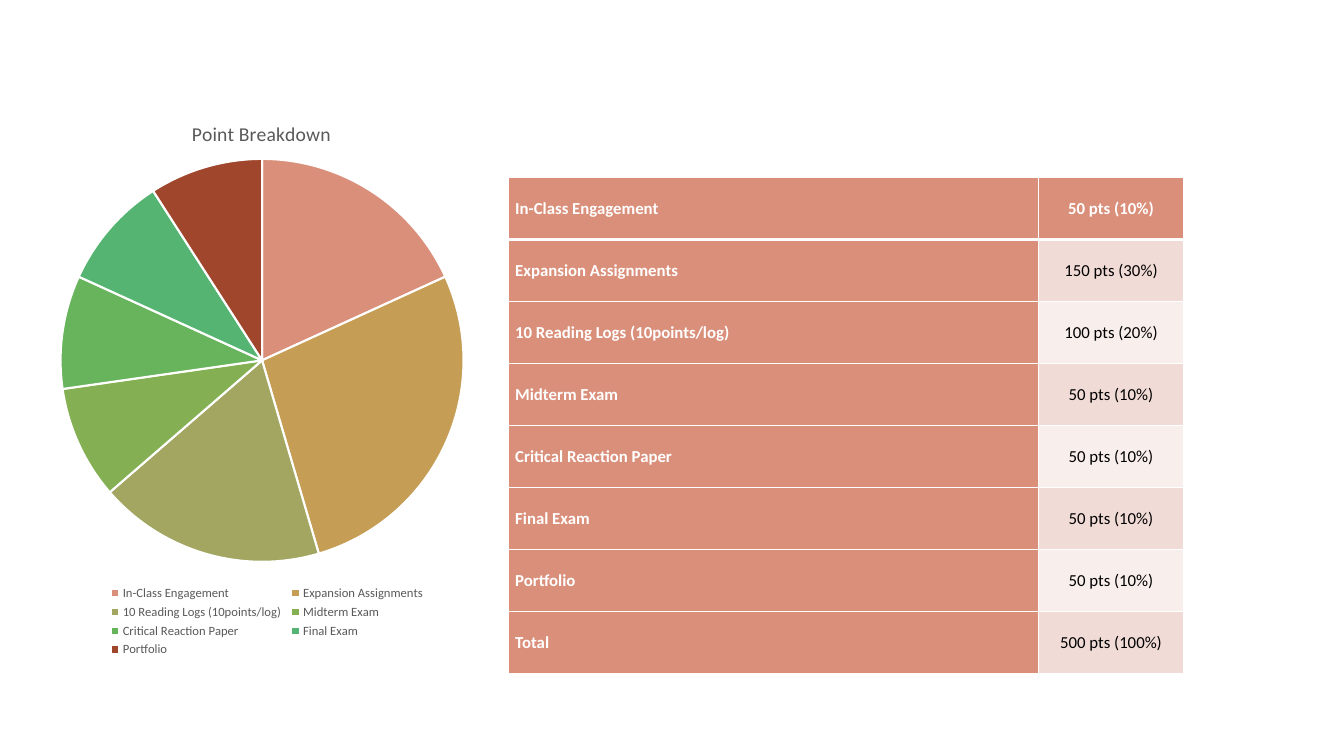
import pptx
import pptx.chart.data
import pptx.dml.color
import pptx.enum.chart
import pptx.enum.text
import pptx.oxml
import pptx.oxml.ns
import pptx.util

FONT = "Calibri"
COLORS = {"white": "FFFFFF", "black": "000000", "gray": "595959",
          "coral": "DA8F7A", "rose": "F1DBD7", "blush": "F8EEEC",
          "gold": "C59D55", "olive": "A2A661", "lime": "84B053",
          "green": "67B45D", "mint": "55B472", "rust": "A0462C"}
CHART_TITLE = "Point Breakdown"
SLICES = [
    ("In-Class Engagement", 18, "coral"),
    ("Expansion Assignments", 27, "gold"),
    ("10 Reading Logs (10points/log)", 18, "olive"),
    ("Midterm Exam", 9, "lime"),
    ("Critical Reaction Paper", 9, "green"),
    ("Final Exam", 9, "mint"),
    ("Portfolio", 9, "rust"),
]
POINTS = ["50 pts (10%)", "150 pts (30%)", "100 pts (20%)", "50 pts (10%)",
          "50 pts (10%)", "50 pts (10%)", "50 pts (10%)", "500 pts (100%)"]
GRADES = list(zip([name for name, share, color in SLICES] + ["Total"], POINTS))
COLUMN_WIDTHS = (5.26, 1.44)
ROW_HEIGHT = 0.615

Inches = pptx.util.Inches
Pt = pptx.util.Pt


def rgb(color):
    return pptx.dml.color.RGBColor.from_string(COLORS[color])


def set_font(font, size, color, bold=False):
    font.name = FONT
    font.size = Pt(size)
    font.bold = bold
    font.color.rgb = rgb(color)


def set_layout(element, index, inner=False, **fractions):
    for old in element.findall(pptx.oxml.ns.qn("c:layout")):
        element.remove(old)
    target = '<c:layoutTarget val="inner"/>' if inner else ""
    modes = '<c:xMode val="edge"/><c:yMode val="edge"/>'
    values = "".join(f'<c:{key} val="{value}"/>' for key, value in fractions.items())
    element.insert(index, pptx.oxml.parse_xml(
        f'<c:layout {pptx.oxml.ns.nsdecls("c")}><c:manualLayout>'
        f"{target}{modes}{values}</c:manualLayout></c:layout>"))


def set_borders(cell, top, bottom):
    properties = cell._tc.get_or_add_tcPr()
    widths = {"lnL": 1, "lnR": 1, "lnT": top, "lnB": bottom}
    for index, (side, width) in enumerate(widths.items()):
        properties.insert(index, pptx.oxml.parse_xml(
            f'<a:{side} {pptx.oxml.ns.nsdecls("a")} w="{Pt(width)}"><a:solidFill>'
            f'<a:srgbClr val="{COLORS["white"]}"/></a:solidFill></a:{side}>'))


def add_pie(page):
    data = pptx.chart.data.CategoryChartData()
    data.categories = [name for name, share, color in SLICES]
    data.add_series("Series 1", [share for name, share, color in SLICES])
    chart = page.shapes.add_chart(
        pptx.enum.chart.XL_CHART_TYPE.PIE, Inches(0.16), Inches(0.93),
        Inches(4.88), Inches(5.63), data).chart
    set_font(chart.font, 10, "black")

    chart.has_title = True
    span = chart.chart_title.text_frame.paragraphs[0].add_run()
    span.text = CHART_TITLE
    set_font(span.font, 14, "gray")
    chart.chart_title.include_in_layout = False
    set_layout(chart.chart_title._element, 1, x=0.35, y=0.04)

    chart.has_legend = True
    chart.legend.position = pptx.enum.chart.XL_LEGEND_POSITION.BOTTOM
    chart.legend.include_in_layout = False
    set_font(chart.legend.font, 9, "gray")
    set_layout(chart.legend._element, 1, x=0.18, y=0.86, w=0.66, h=0.14)

    plot = chart.plots[0]
    plot.vary_by_categories = True
    set_layout(chart._chartSpace.chart.plotArea, 0, inner=True,
               x=0.09, y=0.115, w=0.82, h=0.71)
    for index, (name, share, color) in enumerate(SLICES):
        wedge = plot.series[0].points[index].format
        wedge.fill.solid()
        wedge.fill.fore_color.rgb = rgb(color)
        wedge.line.color.rgb = rgb("white")
        wedge.line.width = Pt(1.5)


def add_grades(page):
    table = page.shapes.add_table(
        len(GRADES), len(COLUMN_WIDTHS), Inches(5.04), Inches(1.76),
        Inches(sum(COLUMN_WIDTHS)), Inches(ROW_HEIGHT * len(GRADES))).table
    for column, width in zip(table.columns, COLUMN_WIDTHS):
        column.width = Inches(width)
    for row_index, grade in enumerate(GRADES):
        table.rows[row_index].height = Inches(ROW_HEIGHT)
        for column_index, text in enumerate(grade):
            cell = table.cell(row_index, column_index)
            heading = row_index == 0 or column_index == 0
            band = "rose" if row_index % 2 else "blush"
            cell.fill.solid()
            cell.fill.fore_color.rgb = rgb("coral" if heading else band)
            set_borders(cell, 3 if row_index == 1 else 1, 3 if row_index == 0 else 1)
            cell.vertical_anchor = pptx.enum.text.MSO_ANCHOR.MIDDLE
            cell.margin_left = cell.margin_right = Inches(0.07)
            cell.margin_top = cell.margin_bottom = 0
            para = cell.text_frame.paragraphs[0]
            if column_index:
                para.alignment = pptx.enum.text.PP_ALIGN.CENTER
            span = para.add_run()
            span.text = text
            set_font(span.font, 12, "white" if heading else "black", heading)


deck = pptx.Presentation()
deck.slide_width = Inches(13.33)
deck.slide_height = Inches(7.5)
page = deck.slides.add_slide(deck.slide_layouts[6])
add_pie(page)
add_grades(page)
deck.save("out.pptx")
